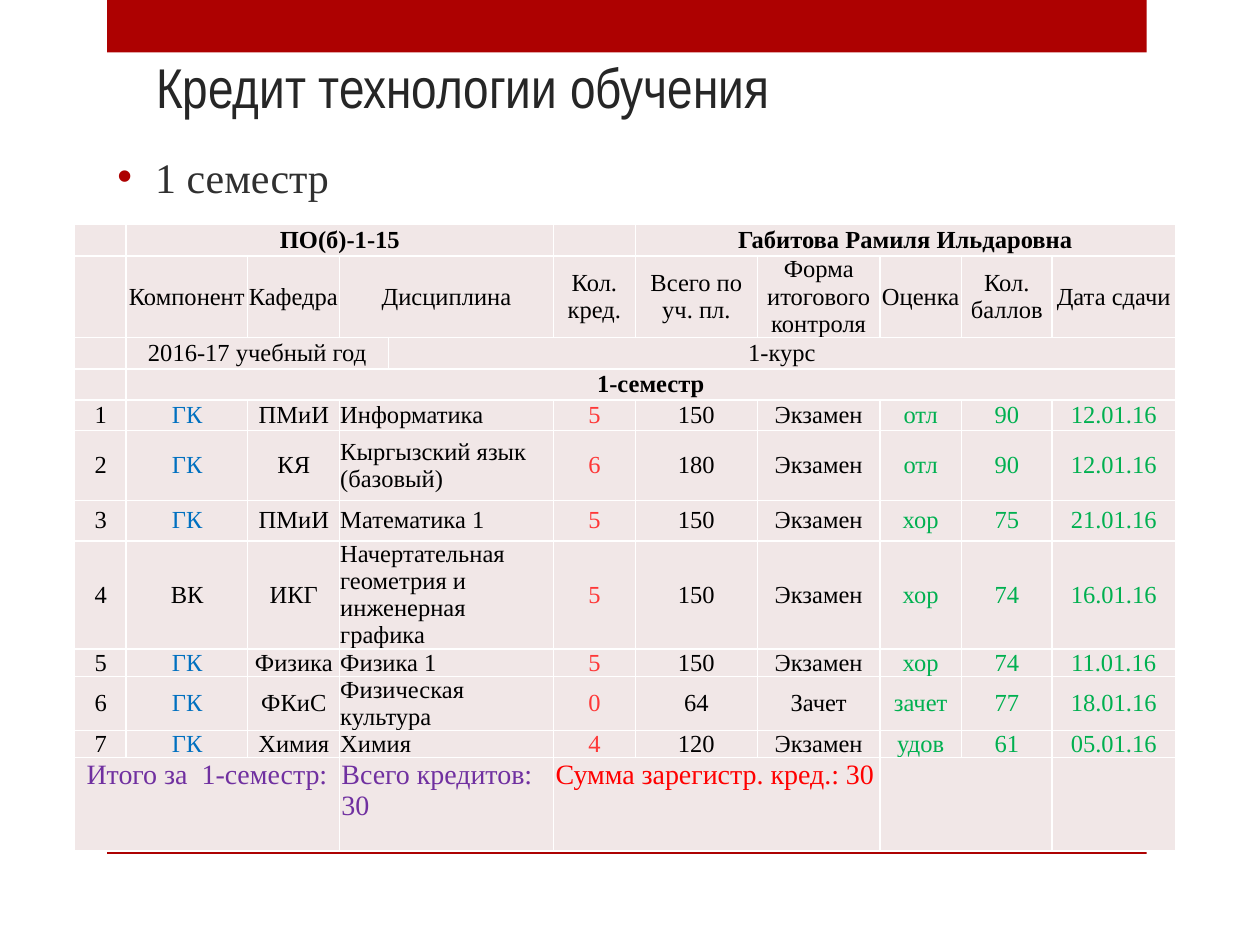
from lxml import etree
from pptx import Presentation
from pptx.dml.color import RGBColor
from pptx.enum import shapes, text
from pptx.oxml import ns
from pptx.util import Pt

COLORS = {
    "band": "AD0101", "title": "262626", "body": "303030", "cell": "F1E7E7",
    "border": "FFFFFF", "black": "000000", "blue": "0070C0", "credit": "FE3737",
    "grade": "00B050", "total": "7030A0", "sum": "FF0000",
}
SERIF = "Times New Roman"
LEFT, CENTER = text.PP_ALIGN.LEFT, text.PP_ALIGN.CENTER

COLUMN_WIDTHS = [29.4, 69.3, 52.6, 28, 94.4, 46.7, 69.9, 69.9, 46.7, 51.8, 70.4]
ROW_HEIGHTS = [17.4, 46.6, 17.4, 17.4, 17.4, 40, 23, 61.7, 15.4, 31, 15.4, 53.5]
COURSE_SPANS = [1, 1, 1, 2, 1, 1, 1, 1, 1, 1]
HEADINGS = ["", "Компонент", "Кафедра", "Дисциплина", "Кол. кред.", "Всего по уч. пл.",
            "Форма итогового контроля", "Оценка", "Кол. баллов", "Дата сдачи"]
COURSES = [
    ("ГК", "ПМиИ", "Информатика", "5", "150", "Экзамен", "отл", "90", "12.01.16"),
    ("ГК", "КЯ", "Кыргызский язык (базовый)", "6", "180", "Экзамен", "отл", "90", "12.01.16"),
    ("ГК", "ПМиИ", "Математика 1", "5", "150", "Экзамен", "хор", "75", "21.01.16"),
    ("ВК", "ИКГ", "Начертательная геометрия и инженерная графика",
     "5", "150", "Экзамен", "хор", "74", "16.01.16"),
    ("ГК", "Физика", "Физика 1", "5", "150", "Экзамен", "хор", "74", "11.01.16"),
    ("ГК", "ФКиС", "Физическая культура", "0", "64", "Зачет", "зачет", "77", "18.01.16"),
    ("ГК", "Химия", "Химия", "4", "120", "Экзамен", "удов", "61", "05.01.16"),
]


def rgb(name):
    return RGBColor.from_string(COLORS[name])


def set_font(para, size, color, name=SERIF, bold=False):
    para.font.name, para.font.size, para.font.bold = name, Pt(size), bold
    para.font.color.rgb = rgb(color)


def move(shape, left, top, width, height):
    shape.left, shape.top, shape.width, shape.height = map(Pt, (left, top, width, height))


def add_band(page, *box):
    band = page.shapes.add_shape(shapes.MSO_SHAPE.RECTANGLE, *map(Pt, box))
    band.shadow.inherit = False
    band.fill.solid()
    band.fill.fore_color.rgb = rgb("band")
    band.line.fill.background()


def fill_title(title, *box):
    move(title, *box)
    frame = title.text_frame
    frame.text = "Кредит технологии обучения"
    frame.vertical_anchor = text.MSO_ANCHOR.BOTTOM
    frame.auto_size = text.MSO_AUTO_SIZE.NONE
    para = frame.paragraphs[0]
    para.alignment = LEFT
    set_font(para, 32, "title", "Arial Narrow")


def fill_body(body, *box):
    move(body, *box)
    frame = body.text_frame
    frame.text = "1 семестр"
    frame.auto_size = text.MSO_AUTO_SIZE.NONE
    para = frame.paragraphs[0]
    para.space_before = Pt(4.8)
    set_font(para, 24, "body")
    props = para._p.get_or_add_pPr()
    props.set("marL", str(Pt(21.6)))
    props.set("indent", str(-Pt(21.6)))
    bullet_color = etree.Element(ns.qn("a:buClr"))
    etree.SubElement(bullet_color, ns.qn("a:srgbClr"), val=COLORS["band"])
    bullet = etree.Element(ns.qn("a:buChar"), char="•")
    first_run_props = props.find(ns.qn("a:defRPr"))
    first_run_props.addprevious(bullet_color)
    first_run_props.addprevious(bullet)


def format_cell(cell):
    """Give a cell its white borders, its fill and a small font for empty text."""
    props = cell._tc.get_or_add_tcPr()
    for side in ("lnL", "lnR", "lnT", "lnB"):
        line = etree.SubElement(props, ns.qn(f"a:{side}"), w=str(Pt(1)))
        fill = etree.SubElement(line, ns.qn("a:solidFill"))
        etree.SubElement(fill, ns.qn("a:srgbClr"), val=COLORS["border"])
    cell.fill.solid()
    cell.fill.fore_color.rgb = rgb("cell")
    cell.margin_left = cell.margin_right = cell.margin_top = cell.margin_bottom = 0
    set_font(cell.text_frame.paragraphs[0], 14, "black")


def fill_row(table, row, spans, words, colors=None, middle=False, size=14, bold=False,
             left_aligned=()):
    """Merge the cells of a row by the spans and write one text into each."""
    colors = colors or ["black"] * len(words)
    column = 0
    for index, (span, word, color) in enumerate(zip(spans, words, colors)):
        cell = table.cell(row, column)
        if span > 1:
            cell.merge(table.cell(row, column + span - 1))
        column += span
        if middle:
            cell.vertical_anchor = text.MSO_ANCHOR.MIDDLE
            cell.margin_left = Pt(0.5 if left_aligned and index < 4 else 0)
        else:
            cell.margin_left = cell.margin_right = Pt(1.2)
            cell.margin_top = cell.margin_bottom = Pt(1.2)
        if word:
            cell.text = word
            para = cell.text_frame.paragraphs[0]
            para.alignment = LEFT if index in left_aligned else CENTER
            set_font(para, size, color, bold=bold)


def add_grades(page, left, top):
    frame = page.shapes.add_table(len(ROW_HEIGHTS), len(COLUMN_WIDTHS), Pt(left), Pt(top),
                                  Pt(sum(COLUMN_WIDTHS)), Pt(sum(ROW_HEIGHTS)))
    table = frame.table
    table.first_row = table.horz_banding = False
    for column, width in zip(table.columns, COLUMN_WIDTHS):
        column.width = Pt(width)
    for row, height in zip(table.rows, ROW_HEIGHTS):
        row.height = Pt(height)
    for cell in table.iter_cells():
        format_cell(cell)

    fill_row(table, 0, [1, 4, 1, 5], ["", "ПО(б)-1-15", "", "Габитова Рамиля Ильдаровна"],
             bold=True)
    fill_row(table, 1, COURSE_SPANS, HEADINGS, middle=True)
    fill_row(table, 2, [1, 3, 7], ["", "2016-17 учебный год", "1-курс"])
    fill_row(table, 3, [1, 10], ["", "1-семестр"], bold=True)
    for number, course in enumerate(COURSES, start=1):
        component = "blue" if course[0] == "ГК" else "black"
        colors = ["black", component, "black", "black", "credit", "black", "black",
                  "grade", "grade", "grade"]
        fill_row(table, number + 3, COURSE_SPANS, [str(number), *course], colors,
                 middle=True, left_aligned=(3,))
    fill_row(table, len(ROW_HEIGHTS) - 1, [3, 2, 3, 2, 1],
             ["Итого за  1-семестр:", "Всего кредитов: 30", "Сумма зарегистр. кред.: 30", "", ""],
             ["total", "total", "sum", "black", "black"], size=16, left_aligned=(1, 2))


def main():
    deck = Presentation()
    deck.slide_width, deck.slide_height = Pt(720), Pt(540)
    page = deck.slides.add_slide(deck.slide_layouts[1])
    add_band(page, 61.2, 0, 594, 30)
    add_band(page, 61.2, 486.2, 594, 1.8)
    fill_title(page.shapes.title, 82, 15, 534, 57)
    fill_body(page.placeholders[1], 59.8, 82.8, 594, 402.5)
    add_grades(page, 42.7, 128.4)
    deck.save("out.pptx")


if __name__ == "__main__":
    main()
